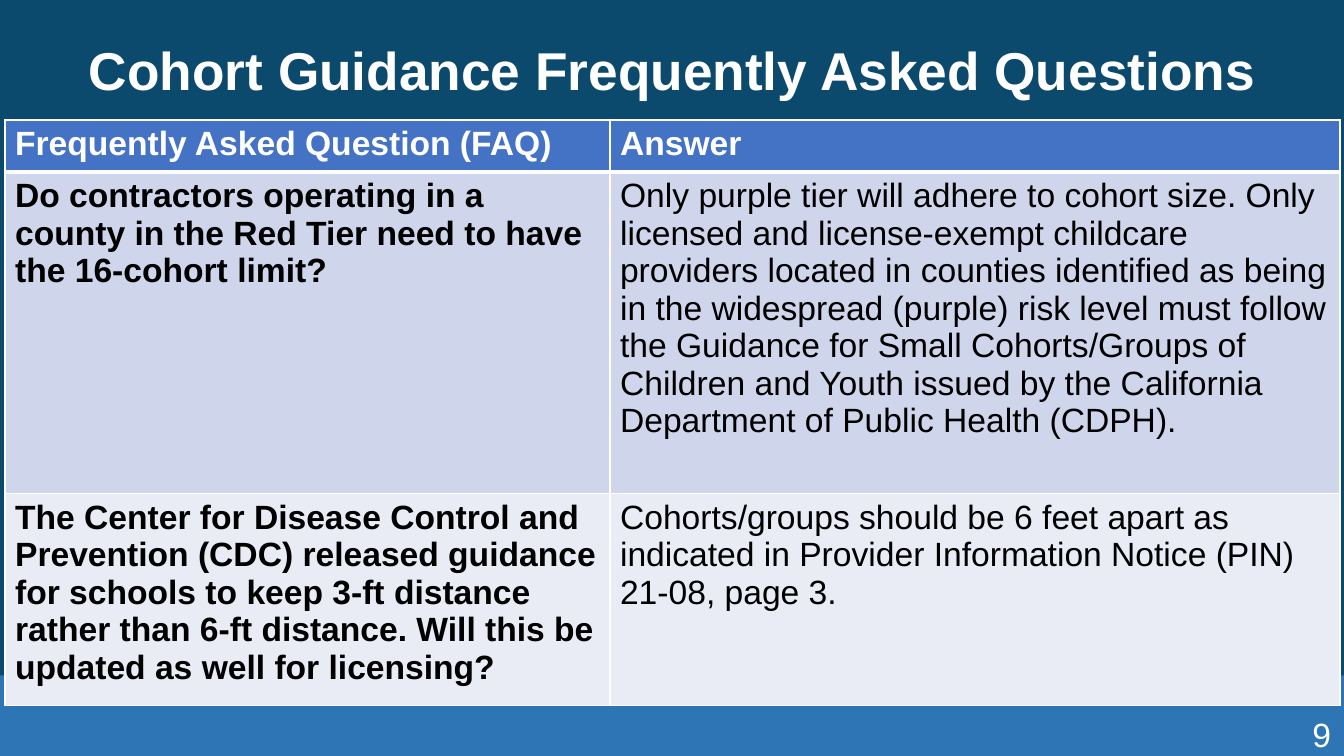
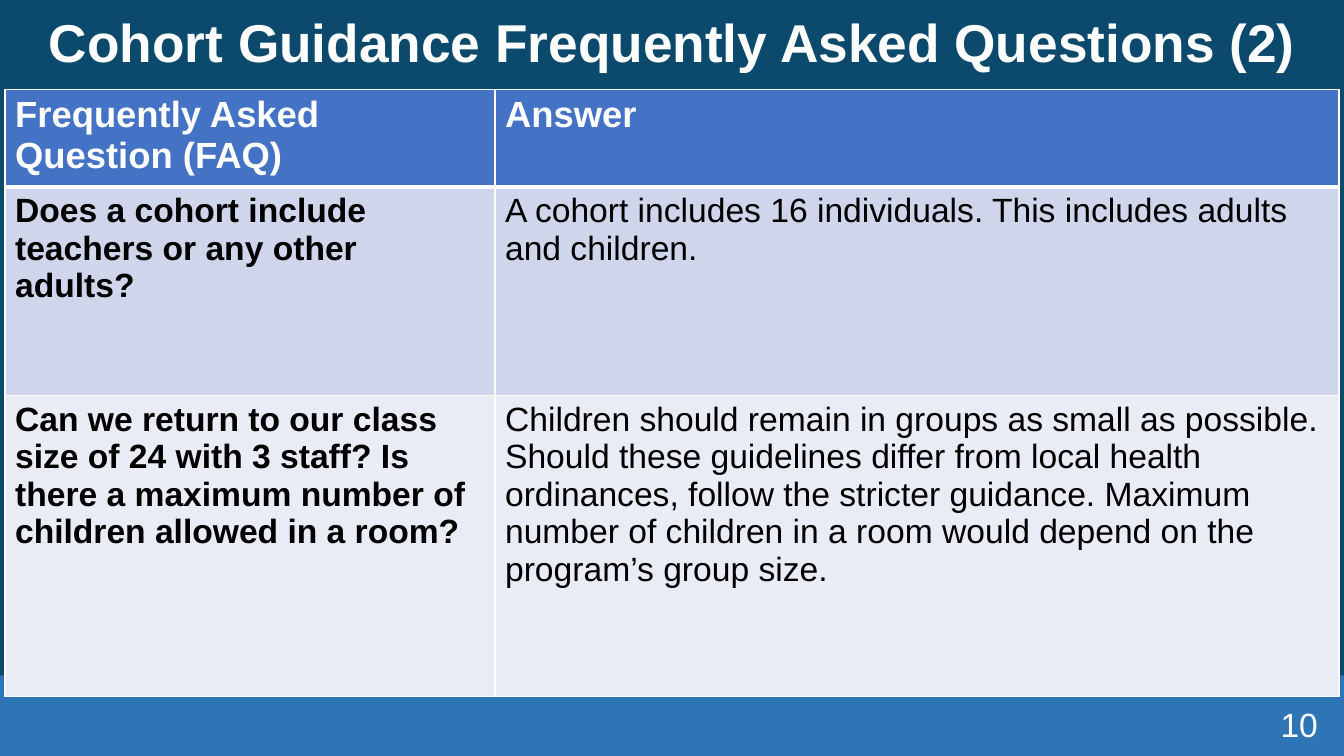
"""Build two slides of cohort guidance questions and answers."""
from lxml.etree import SubElement as Sub
from pptx import Presentation
from pptx.dml.color import RGBColor as RGB
from pptx.enum.shapes import MSO_SHAPE as SHAPE
from pptx.enum.text import MSO_ANCHOR as ANCHOR, PP_ALIGN as ALIGN
from pptx.oxml.ns import qn
from pptx.util import Inches, Pt

HUES = {"back": "0C4A6D", "band": "2E75B6", "head": "4472C4", "odd": "CFD5EA",
        "even": "E9EBF5", "white": "FFFFFF", "black": "000000"}
FONT = "Arial"
WIDE, HIGH = 13.33, 7.5
BAND = 0.8
HEAD = ("Frequently Asked Question (FAQ)", "Answer")

PAGES = [
    {"title": "Cohort Guidance Frequently Asked Questions", "top": 0,
     "grid": (0.05, 1.19), "cols": (6, 7.24), "rows": (0.52, 3.19, 1.96),
     "size": 24, "num": "9", "spot": (10.3, 7.08),
     "faq": [
         ("Do contractors operating in a county in the Red Tier need to have "
          "the 16-cohort limit?",
          "Only purple tier will adhere to cohort size. Only licensed and "
          "license-exempt childcare providers located in counties identified "
          "as being in the widespread (purple) risk level must follow the "
          "Guidance for Small Cohorts/Groups of Children and Youth issued by "
          "the California Department of Public Health (CDPH)."),
         ("The Center for Disease Control and Prevention (CDC) released "
          "guidance for schools to keep 3-ft distance rather than 6-ft "
          "distance. Will this be updated as well for licensing?",
          "Cohorts/groups should be 6 feet apart as indicated in Provider "
          "Information Notice (PIN) 21-08, page 3.")]},
    {"title": "Cohort Guidance Frequently Asked Questions (2)", "top": -0.28,
     "grid": (0.05, 0.89), "cols": (4.86, 8.37), "rows": (0.96, 2.07, 2.98),
     "size": 26, "num": "10", "spot": (10.17, 6.98),
     "faq": [
         ("Does a cohort include teachers or any other adults?",
          "A cohort includes 16 individuals. This includes adults and "
          "children."),
         ("Can we return to our class size of 24 with 3 staff? Is there a "
          "maximum number of children allowed in a room?",
          "Children should remain in groups as small as possible. Should "
          "these guidelines differ from local health ordinances, follow the "
          "stricter guidance. Maximum number of children in a room would "
          "depend on the program’s group size.")]},
]


def put(frame, text, size=24, hue="white", bold=False, align=ALIGN.LEFT,
        anchor=ANCHOR.TOP, lead=1.0):
    frame.word_wrap = True
    frame.vertical_anchor = anchor
    para = frame.paragraphs[0]
    para.alignment = align
    para.line_spacing = lead
    run = para.add_run()
    run.text = text
    run.font.name = FONT
    run.font.size = Pt(size)
    run.font.bold = bold
    run.font.color.rgb = RGB.from_string(HUES[hue])


def edge(cell, **sides):
    props = cell._tc.get_or_add_tcPr()
    for side, width in sides.items():
        line = Sub(props, qn(f"a:ln{side}"), w=str(Pt(width)))
        fill = Sub(line, qn("a:solidFill"))
        Sub(fill, qn("a:srgbClr"), val=HUES["white"])


prs = Presentation()
prs.slide_width, prs.slide_height = Inches(WIDE), Inches(HIGH)
back = prs.slide_master.background.fill
back.solid()
back.fore_color.rgb = RGB.from_string(HUES["back"])

for page in PAGES:
    shapes = prs.slides.add_slide(prs.slide_layouts[6]).shapes

    band = shapes.add_shape(SHAPE.RECTANGLE, 0, Inches(HIGH - BAND),
                            Inches(WIDE), Inches(BAND))
    band.shadow.inherit = False
    band.fill.solid()
    band.fill.fore_color.rgb = RGB.from_string(HUES["band"])
    band.line.fill.background()

    title = shapes.add_textbox(Inches(0.17), Inches(page["top"]),
                               Inches(13), Inches(1.45))
    put(title.text_frame, page["title"], size=38, bold=True,
        align=ALIGN.CENTER, anchor=ANCHOR.MIDDLE, lead=0.9)

    cols, rows = page["cols"], page["rows"]
    left, top = page["grid"]
    table = shapes.add_table(len(rows), len(cols), Inches(left), Inches(top),
                             Inches(sum(cols)), Inches(sum(rows))).table
    for col, width in zip(table.columns, cols):
        col.width = Inches(width)
    for row, high in zip(table.rows, rows):
        row.height = Inches(high)

    for r, texts in enumerate([HEAD, *page["faq"]]):
        for c, text in enumerate(texts):
            cell = table.cell(r, c)
            edge(cell, L=1, R=1, T=3 if r == 1 else 1, B=3 if r == 0 else 1)
            cell.fill.solid()
            cell.fill.fore_color.rgb = RGB.from_string(
                HUES[("head", "odd", "even")[r]])
            put(cell.text_frame, text, size=24 if r else page["size"],
                hue="black" if r else "white", bold=r == 0 or c == 0)

    x, y = page["spot"]
    num = shapes.add_textbox(Inches(x), Inches(y), Inches(3), Inches(0.4))
    put(num.text_frame, page["num"], align=ALIGN.RIGHT, anchor=ANCHOR.MIDDLE)

prs.save("out.pptx")
